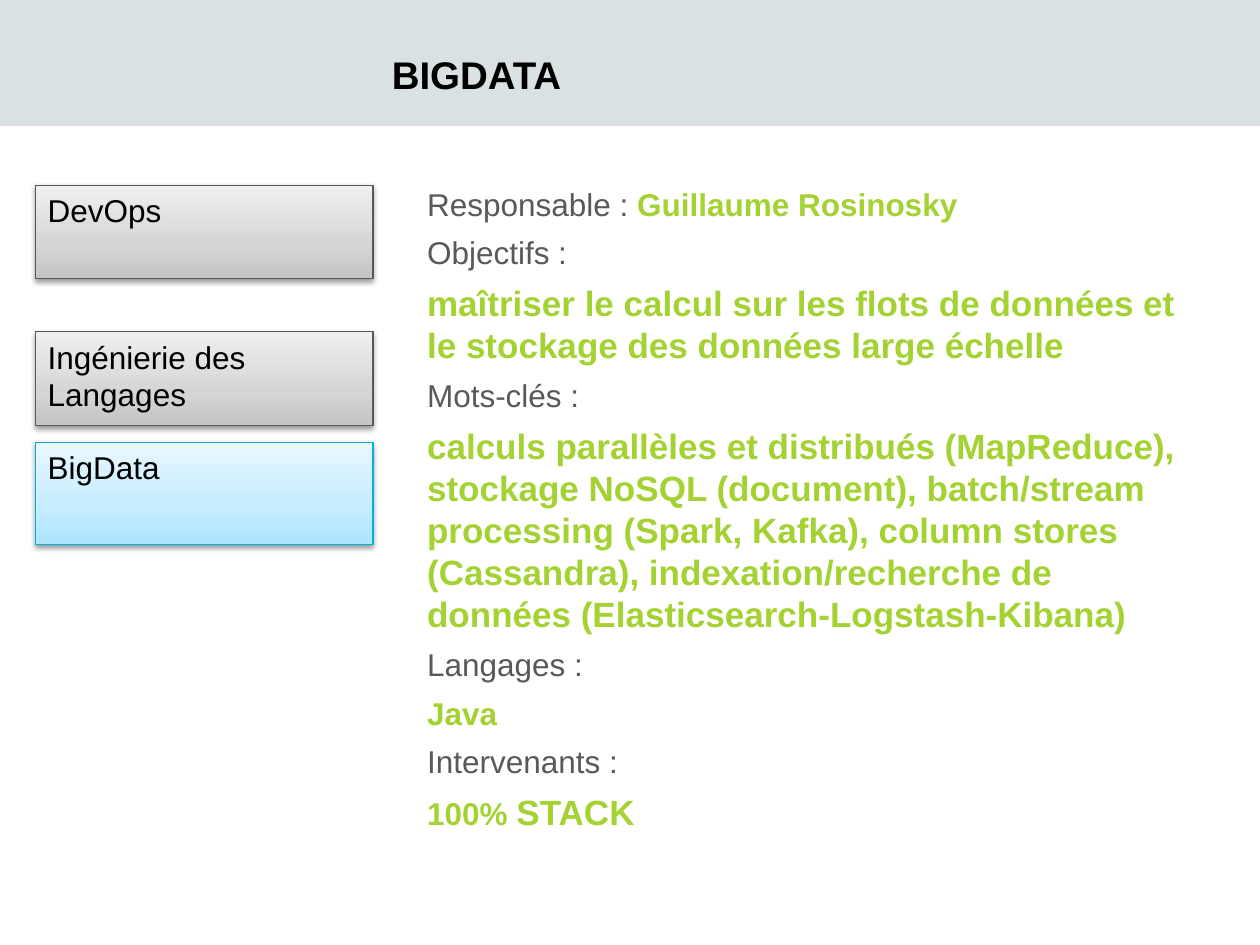
from lxml import etree
from pptx import Presentation
from pptx import util as u
from pptx.dml.color import RGBColor
from pptx.enum import shapes, text
from pptx.oxml import parse_xml
from pptx.oxml.ns import nsdecls, qn

W, H = 10, 7.5
FONT = "Arial"
GREY, GREEN, BLACK = "595959", "A4D233", "000000"
SILVER = (("C4C4C4", "D5D5D5", "EFEFEF"), "575757")
BLUE = (("ADE5FF", "C5ECFF", "E9F7FF"), "00B4D9")
STOPS = (0, 35, 100)
MENU_LEFT, MENU_WIDTH = 0.28, 2.68
TOP = 1.47

MENU = [
    ("BigData", 3.51, 0.81, BLUE),
    ("Ingénierie des Langages", 2.63, 0.75, SILVER),
    ("DevOps", TOP, 0.74, SILVER),
]

DETAILS = [
    [("Responsable : ", 18, GREY), ("Guillaume Rosinosky", 18, GREEN)],
    [("Objectifs :", 18, GREY)],
    [("maîtriser le calcul sur les flots de données et le stockage "
      "des données large échelle", 20, GREEN)],
    [("Mots-clés :", 18, GREY)],
    [("calculs parallèles et distribués (MapReduce), stockage NoSQL (document), "
      "batch/stream processing (Spark, Kafka), column stores (Cassandra), "
      "indexation/recherche de données (Elasticsearch-Logstash-Kibana)", 20, GREEN)],
    [("Langages :", 18, GREY)],
    [("Java", 18, GREEN)],
    [("Intervenants :", 18, GREY)],
    [("100% ", 18, GREEN), ("STACK", 20, GREEN)],
]


def rgb(value):
    return RGBColor.from_string(value)


def box(*lengths):
    return [u.Inches(n) for n in lengths]


def style(r, size, color, bold=False):
    r.font.name = FONT
    r.font.size = u.Pt(size)
    r.font.bold = bold
    r.font.color.rgb = rgb(color)


def add_rect(s, left, top, width, height):
    sp = s.shapes.add_shape(shapes.MSO_SHAPE.RECTANGLE, *box(left, top, width, height))
    sp.shadow.inherit = False
    return sp


def add_band(s):
    sp = add_rect(s, 0, 0, W, 1)
    sp.fill.solid()
    sp.fill.fore_color.rgb = rgb("D9E1E2")
    sp.line.fill.background()


def add_text(s, left, top, width, height, anchor):
    tf = s.shapes.add_textbox(*box(left, top, width, height)).text_frame
    tf.word_wrap = True
    tf.vertical_anchor = anchor
    tf.margin_left = tf.margin_top = tf.margin_right = tf.margin_bottom = 0
    return tf


def add_title(s, title):
    tf = add_text(s, 3.11, 0.21, W - 3.11, 0.56, text.MSO_ANCHOR.BOTTOM)
    tf.text = title
    style(tf.paragraphs[0].runs[0], 22, BLACK, True)


def set_gradient(sp, colors):
    sp.fill.gradient()
    sp.fill.gradient_angle = 90
    stops = sp._element.spPr.find(qn("a:gradFill")).find(qn("a:gsLst"))
    for old in list(stops):
        stops.remove(old)
    for pos, color in zip(STOPS, colors):
        gs = etree.SubElement(stops, qn("a:gs"), pos=str(pos * 1000))
        etree.SubElement(gs, qn("a:srgbClr"), val=color)


def set_shadow(sp):
    spPr = sp._element.spPr
    spPr.remove(spPr.find(qn("a:effectLst")))
    spPr.append(parse_xml(
        f'<a:effectLst {nsdecls("a")}><a:outerShdw blurRad="{u.Pt(3.1)}" '
        f'dist="{u.Pt(1.6)}" dir="5400000" rotWithShape="0"><a:srgbClr val="{BLACK}">'
        '<a:alpha val="38000"/></a:srgbClr></a:outerShdw></a:effectLst>'))


def add_menu_item(s, label, top, height, theme):
    colors, line = theme
    sp = add_rect(s, MENU_LEFT, top, MENU_WIDTH, height)
    set_gradient(sp, colors)
    sp.line.color.rgb = rgb(line)
    sp.line.width = u.Pt(0.75)
    set_shadow(sp)
    tf = sp.text_frame
    tf.word_wrap = True
    tf.vertical_anchor = text.MSO_ANCHOR.TOP
    tf.text = label
    p = tf.paragraphs[0]
    p.alignment = text.PP_ALIGN.LEFT
    style(p.runs[0], 18, BLACK)


def add_details(s):
    tf = add_text(s, 3.19, TOP, 6.2, 4.46, text.MSO_ANCHOR.TOP)
    for i, parts in enumerate(DETAILS):
        p = tf.add_paragraph() if i else tf.paragraphs[0]
        p._p.get_or_add_pPr().set("marL", str(u.Inches(0.2)))
        p.space_after = u.Pt(6)
        for words, size, color in parts:
            r = p.add_run()
            r.text = words
            style(r, size, color, color == GREEN)


def main():
    prs = Presentation()
    prs.slide_width, prs.slide_height = box(W, H)
    s = prs.slides.add_slide(prs.slide_layouts[6])
    add_band(s)
    add_title(s, "BIGDATA")
    add_details(s)
    for item in MENU:
        add_menu_item(s, *item)
    prs.save("out.pptx")


if __name__ == "__main__":
    main()
